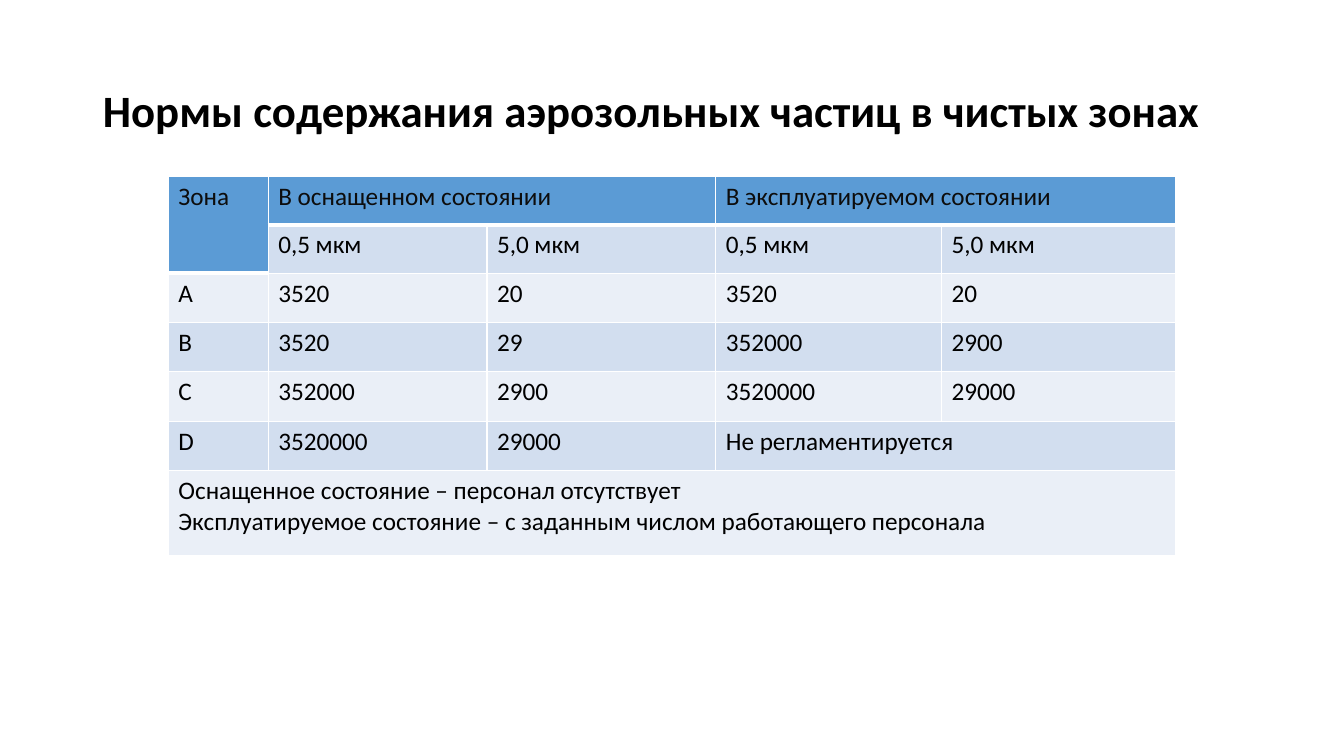
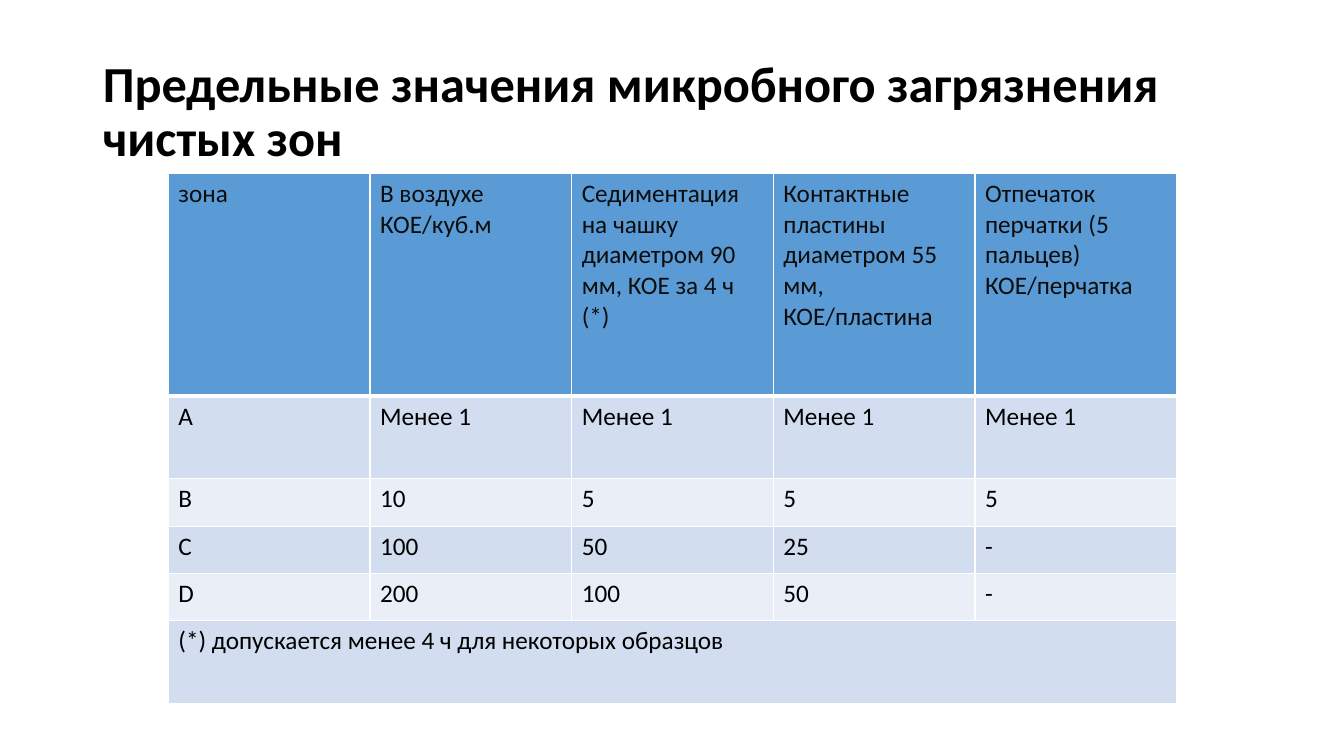
from lxml.etree import SubElement
from pptx import Presentation
from pptx.dml.color import RGBColor
from pptx.enum.text import MSO_ANCHOR, MSO_AUTO_SIZE, PP_ALIGN
from pptx.oxml.ns import qn
from pptx.util import Inches, Pt

FONT = "Calibri"
BLACK = RGBColor(0x00, 0x00, 0x00)
HEADER_TEXT = RGBColor(0x0D, 0x0D, 0x0D)
WHITE = RGBColor(0xFF, 0xFF, 0xFF)
HEADER_FILL = RGBColor(0x5B, 0x9B, 0xD5)
BANDS = [RGBColor(0xEA, 0xEF, 0xF7), RGBColor(0xD2, 0xDE, 0xEF)]

SLIDES = [
    {
        "title": "Нормы содержания аэрозольных частиц в чистых зонах",
        "size": 32,
        "top": 1.75,
        "columns": [0.99, 2.17, 2.27, 2.24, 2.32],
        "heights": [0.48] * 2 + [0.49] * 4 + [0.84],
        "rows": [
            ["Зона", "В оснащенном состоянии", "", "В эксплуатируемом состоянии", ""],
            ["", "0,5 мкм", "5,0 мкм", "0,5 мкм", "5,0 мкм"],
            ["А", "3520", "20", "3520", "20"],
            ["В", "3520", "29", "352000", "2900"],
            ["С", "352000", "2900", "3520000", "29000"],
            ["D", "3520000", "29000", "Не регламентируется", ""],
            ["Оснащенное состояние – персонал отсутствует\n"
             "Эксплуатируемое состояние – с заданным числом работающего персонала",
             "", "", "", ""],
        ],
        "merges": [(0, 0, 1, 0), (0, 1, 0, 2), (0, 3, 0, 4), (5, 3, 5, 4), (6, 0, 6, 4)],
    },
    {
        "title": "Предельные значения микробного загрязнения чистых зон",
        "size": 36,
        "top": 1.72,
        "columns": [2] * 5,
        "heights": [2.21, 0.82, 0.47, 0.47, 0.47, 0.82],
        "rows": [
            ["зона", "В воздухе КОЕ/куб.м",
             "Седиментация на чашку диаметром 90 мм, КОЕ за 4 ч (*)",
             "Контактные пластины диаметром 55 мм, КОЕ/пластина",
             "Отпечаток перчатки (5 пальцев) КОЕ/перчатка"],
            ["А"] + ["Менее 1"] * 4,
            ["В", "10", "5", "5", "5"],
            ["С", "100", "50", "25", "-"],
            ["D", "200", "100", "50", "-"],
            ["(*) допускается менее 4 ч для некоторых образцов", "", "", "", ""],
        ],
        "merges": [(5, 0, 5, 4)],
    },
]


def set_borders(cell, bottom_width):
    properties = cell._tc.get_or_add_tcPr()
    widths = {"a:lnL": 1, "a:lnR": 1, "a:lnT": 1, "a:lnB": bottom_width}
    for position, (tag, width) in enumerate(widths.items()):
        line = SubElement(properties, qn(tag), w=str(Pt(width)))
        properties.insert(position, line)
        fill = SubElement(line, qn("a:solidFill"))
        SubElement(fill, qn("a:srgbClr"), val=str(WHITE))


presentation = Presentation()
presentation.slide_width = Inches(13.33)
presentation.slide_height = Inches(7.5)

for content in SLIDES:
    slide = presentation.slides.add_slide(presentation.slide_layouts[5])

    title = slide.shapes.title
    title.left, title.top = Inches(0.92), Inches(0.4)
    title.width, title.height = Inches(11.5), Inches(1.45)
    title.text_frame.text = content["title"]
    title.text_frame.word_wrap = True
    title.text_frame.auto_size = MSO_AUTO_SIZE.NONE
    title.text_frame.vertical_anchor = MSO_ANCHOR.MIDDLE
    paragraph = title.text_frame.paragraphs[0]
    paragraph.alignment = PP_ALIGN.LEFT
    paragraph.line_spacing = 0.9
    paragraph.font.name = FONT
    paragraph.font.size = Pt(content["size"])
    paragraph.font.bold = True
    paragraph.font.color.rgb = BLACK

    rows, columns, heights = content["rows"], content["columns"], content["heights"]
    table = slide.shapes.add_table(
        len(rows), len(columns), Inches(1.67), Inches(content["top"]),
        Inches(sum(columns)), Inches(sum(heights))).table
    for column, width in zip(table.columns, columns):
        column.width = Inches(width)
    for row, height in zip(table.rows, heights):
        row.height = Inches(height)

    for row_index, texts in enumerate(rows):
        is_header = row_index == 0
        for column_index, text in enumerate(texts):
            cell = table.cell(row_index, column_index)
            cell.text = text
            cell.fill.solid()
            cell.fill.fore_color.rgb = HEADER_FILL if is_header else BANDS[row_index % 2]
            set_borders(cell, 3 if is_header else 1)
            for paragraph in cell.text_frame.paragraphs:
                paragraph.font.name = FONT
                paragraph.font.size = Pt(18)
                paragraph.font.bold = False
                paragraph.font.color.rgb = HEADER_TEXT if is_header else BLACK

    for first_row, first_column, last_row, last_column in content["merges"]:
        table.cell(first_row, first_column).merge(table.cell(last_row, last_column))

presentation.save("out.pptx")
